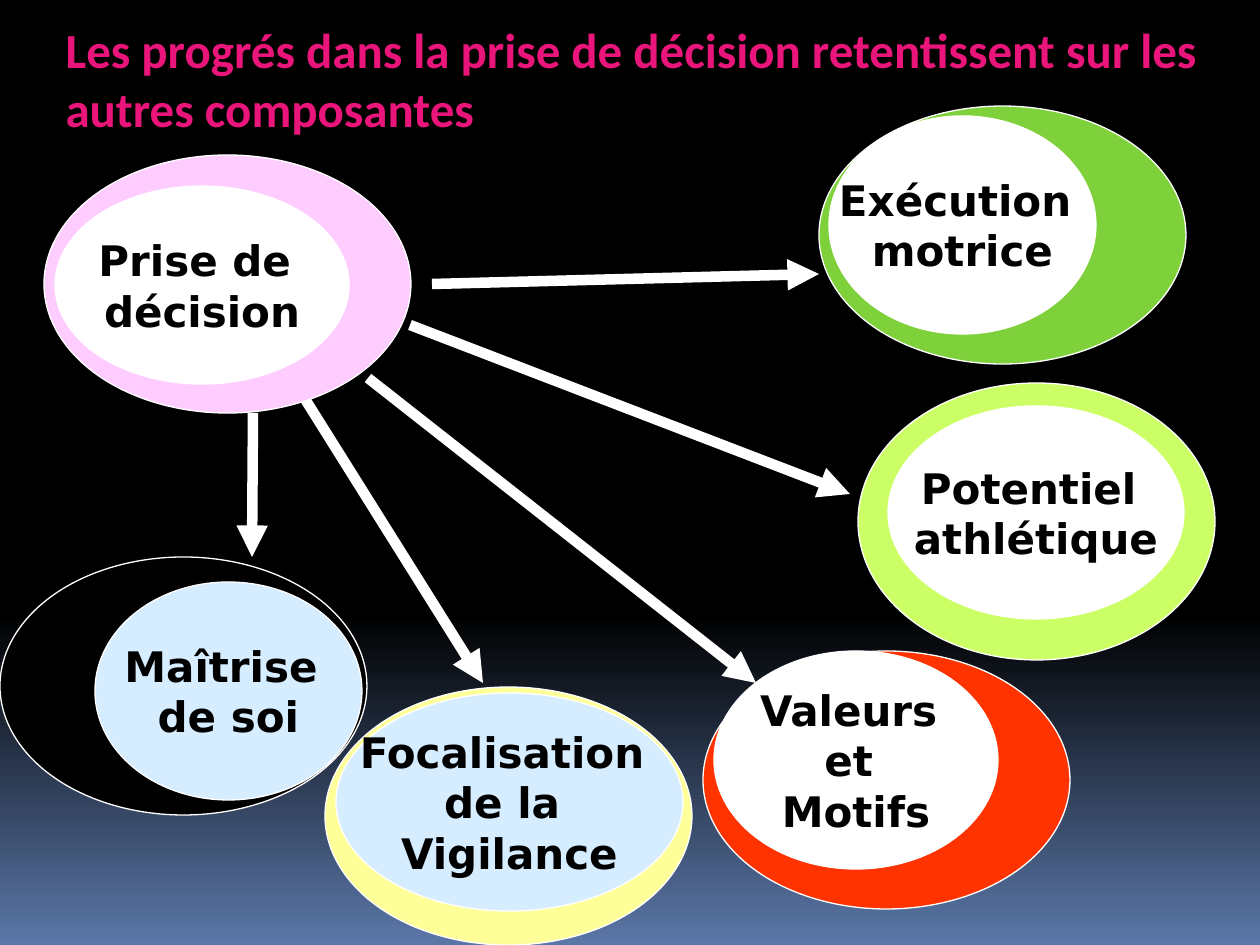
from copy import deepcopy
from dataclasses import dataclass

from lxml.etree import SubElement
from pptx import Presentation
from pptx.dml.color import RGBColor
from pptx.enum.shapes import MSO_CONNECTOR as Connector, MSO_SHAPE as Shape
from pptx.enum.text import MSO_ANCHOR as Anchor, PP_ALIGN as Align
from pptx.oxml.ns import qn
from pptx.util import Pt

TITLE = "Les progrés dans la prise de décision retentissent sur les autres composantes"
TITLE_AREA = (53, 21, 1207, 115)

ARROWS = [
    ((368, 378), (756, 683)),
    ((432, 284), (819, 274)),
    ((253, 413), (252, 557)),
    ((410, 325), (850, 494)),
    ((305, 399), (483, 683)),
]

COMPONENTS = [
    (["Valeurs ", "et ", "Motifs"], "red", (703, 651, 367, 258), "white", (714, 651, 284, 218)),
    (["Exécution ", "motrice"], "green", (819, 106, 367, 258), "white", (829, 116, 267, 218)),
    (["Maîtrise ", "de soi"], "black", (0, 557, 367, 258), "sky", (95, 582, 267, 218)),
    (["Focalisation ", "de la ", "Vigilance"], "yellow", (325, 687, 367, 258), "sky", (336, 693, 347, 218)),
    (["Prise de ", "décision"], "pink", (44, 155, 367, 258), "white", (55, 186, 294, 198)),
    (["Potentiel ", "athlétique"], "lime", (858, 383, 357, 277), "white", (888, 406, 296, 213)),
]


@dataclass(frozen=True)
class Theme:
    white: str = "FFFFFF"
    black: str = "000000"
    blue: str = "5B77A8"
    magenta: str = "EA157A"
    red: str = "FF3300"
    green: str = "7FD13B"
    sky: str = "D6ECFF"
    yellow: str = "FFFF99"
    pink: str = "FFCCFF"
    lime: str = "CCFF66"
    title_font: str = "Calibri"
    label_font: str = "DejaVu Sans"
    title_size: int = 28
    label_size: int = 24
    outline: float = 0.75
    arrow: int = 6


THEME = Theme()
SCALE = 914400 / 126


def px(*lengths):
    return [round(length * SCALE) for length in lengths]


def color(name):
    return RGBColor.from_string(getattr(THEME, name))


def write(box, lines, *, font, size, ink, align, wrap):
    frame = box.text_frame
    frame.word_wrap = wrap
    frame.vertical_anchor = Anchor.MIDDLE
    for index, line in enumerate(lines):
        para = frame.add_paragraph() if index else frame.paragraphs[0]
        para.alignment = align
        span = para.add_run()
        span.text = line
        span.font.name = font
        span.font.size = Pt(size)
        span.font.bold = True
        span.font.color.rgb = color(ink)


def add_ellipse(page, area, fill):
    ellipse = page.shapes.add_shape(Shape.OVAL, *px(*area))
    ellipse.shadow.inherit = False
    ellipse.fill.solid()
    ellipse.fill.fore_color.rgb = color(fill)
    ellipse.line.color.rgb = color("white")
    ellipse.line.width = Pt(THEME.outline)
    return ellipse


def add_arrow(page, start, end):
    arrow = page.shapes.add_connector(Connector.STRAIGHT, *px(*start, *end))
    arrow.line.color.rgb = color("white")
    arrow.line.width = Pt(THEME.arrow)
    SubElement(arrow.line._get_or_add_ln(), qn("a:tailEnd"), type="triangle")
    SubElement(arrow._element.spPr, qn("a:effectLst"))


def paint_background(page):
    fill = page.background.fill
    fill.gradient()
    fill.gradient_angle = 270
    stop_list = page.element.xpath(".//p:bg//a:gsLst")[0]
    stop_list.insert(1, deepcopy(stop_list[0]))
    stops = [(0, "black"), (0.65, "black"), (1, "blue")]
    for stop, (position, name) in zip(fill.gradient_stops, stops):
        stop.position = position
        stop.color.rgb = color(name)


def main():
    deck = Presentation()
    deck.slide_width, deck.slide_height = px(1260, 945)
    page = deck.slides.add_slide(deck.slide_layouts[5])
    paint_background(page)

    title = page.shapes.title
    title.left, title.top, title.width, title.height = px(*TITLE_AREA)
    write(title, [TITLE], font=THEME.title_font, size=THEME.title_size,
          ink="magenta", align=Align.LEFT, wrap=True)

    for start, end in ARROWS:
        add_arrow(page, start, end)

    for lines, rim, rim_area, core, core_area in COMPONENTS:
        add_ellipse(page, rim_area, rim)
        label = add_ellipse(page, core_area, core)
        write(label, lines, font=THEME.label_font, size=THEME.label_size,
              ink="black", align=Align.CENTER, wrap=False)

    deck.save("out.pptx")


if __name__ == "__main__":
    main()
